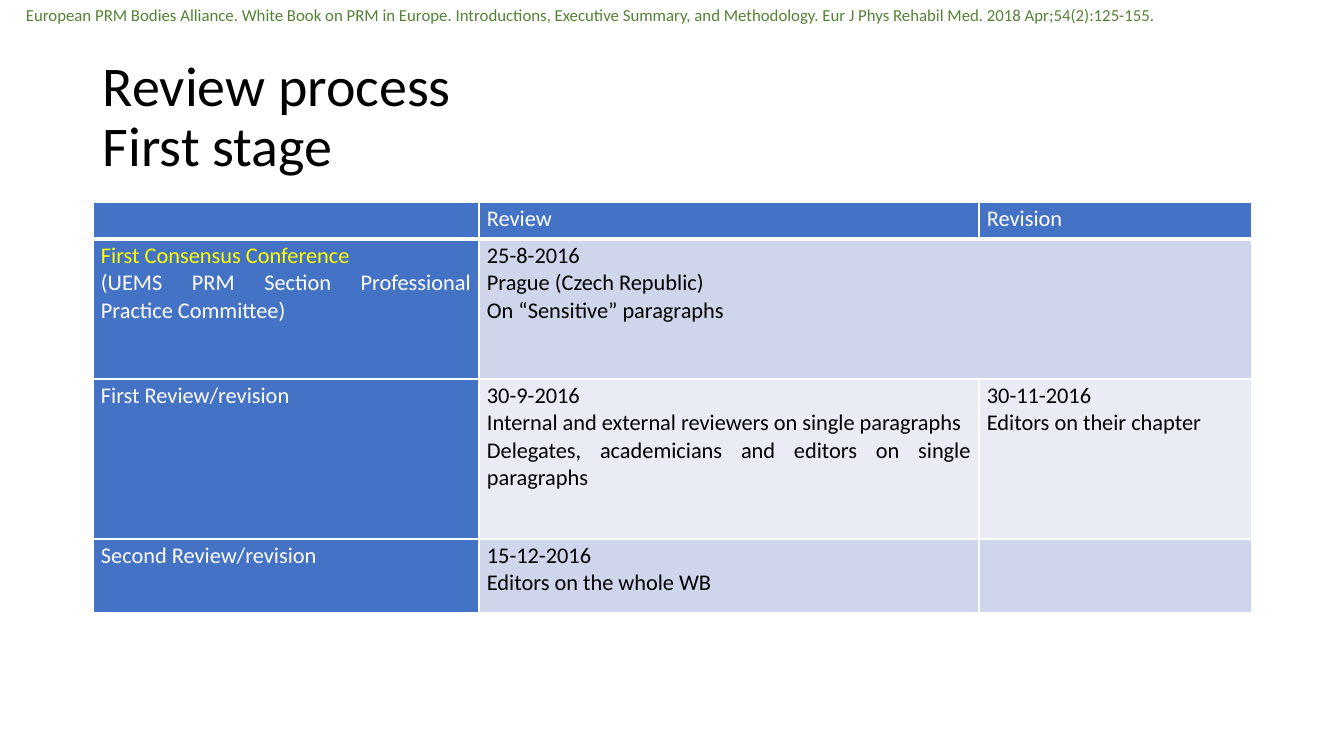
"""Build the slide on the first stage of the review process."""
import lxml.etree
import pptx
import pptx.dml.color
import pptx.enum.text
import pptx.oxml.ns
import pptx.util

EMU_PER_PX = 914400 / 100.8
FONT = "Calibri"
WHITE, BLACK, YELLOW, GREEN = "FFFFFF", "000000", "FFFF00", "548235"
HEADER_FILL = "4472C4"
BAND_FILLS = ["E9EBF5", "CFD5EA"]
COLUMN_WIDTHS = [386, 500, 273]
ROW_HEIGHTS = [37, 140, 160, 74]
CITATION = (
    "European PRM Bodies Alliance. White Book on PRM in Europe. Introductions, "
    "Executive Summary, and Methodology. Eur J Phys Rehabil Med. 2018 Apr;54(2):125-155."
)
REVIEW_ROWS = [
    ["", "Review", "Revision"],
    [
        "First Consensus Conference\n(UEMS PRM Section Professional Practice Committee)",
        "25-8-2016\nPrague (Czech Republic)\nOn “Sensitive” paragraphs",
        "",
    ],
    [
        "First Review/revision",
        "30-9-2016\nInternal and external reviewers on single paragraphs\n"
        "Delegates, academicians and editors on single paragraphs",
        "30-11-2016\nEditors on their chapter",
    ],
    ["Second Review/revision", "15-12-2016\nEditors on the whole WB", ""],
]


def px(length):
    return pptx.util.Emu(round(length * EMU_PER_PX))


def color(value):
    return pptx.dml.color.RGBColor.from_string(value)


def style_font(font, size, value):
    font.name = FONT
    font.size = pptx.util.Pt(size)
    font.color.rgb = color(value)


def add_text(slide, box, text, size, value, anchor, line_spacing):
    shape = slide.shapes.add_textbox(*map(px, box))
    text_frame = shape.text_frame
    text_frame.word_wrap = True
    text_frame.vertical_anchor = anchor
    text_frame.text = text
    paragraph = text_frame.paragraphs[0]
    paragraph.line_spacing = line_spacing
    for run in paragraph.runs:
        style_font(run.font, size, value)


def add_borders(cell, bottom_width):
    properties = cell._tc.get_or_add_tcPr()
    for side, width in zip("LRTB", [1, 1, 1, bottom_width]):
        line = lxml.etree.SubElement(
            properties, pptx.oxml.ns.qn(f"a:ln{side}"), w=str(pptx.util.Pt(width))
        )
        fill = lxml.etree.SubElement(line, pptx.oxml.ns.qn("a:solidFill"))
        lxml.etree.SubElement(fill, pptx.oxml.ns.qn("a:srgbClr"), val=WHITE)


def fill_cell(cell, text, row, column):
    is_header = row == 0 or column == 0
    add_borders(cell, 3 if row == 0 else 1)
    cell.fill.solid()
    cell.fill.fore_color.rgb = color(HEADER_FILL if is_header else BAND_FILLS[row % 2])
    cell.margin_left = cell.margin_right = px(8)
    cell.margin_top = cell.margin_bottom = px(3)
    cell.text_frame.text = text
    for paragraph in cell.text_frame.paragraphs:
        paragraph.alignment = pptx.enum.text.PP_ALIGN.JUSTIFY
        for run in paragraph.runs:
            style_font(run.font, 16, WHITE if is_header else BLACK)


def add_review_table(slide, left, top):
    frame = slide.shapes.add_table(
        len(ROW_HEIGHTS), len(COLUMN_WIDTHS),
        px(left), px(top), px(sum(COLUMN_WIDTHS)), px(sum(ROW_HEIGHTS)),
    )
    table = frame.table
    table.horz_banding = False
    for column, width in zip(table.columns, COLUMN_WIDTHS):
        column.width = px(width)
    for row, height in zip(table.rows, ROW_HEIGHTS):
        row.height = px(height)
    for row, texts in enumerate(REVIEW_ROWS):
        for column, text in enumerate(texts):
            fill_cell(table.cell(row, column), text, row, column)
    table.cell(1, 1).merge(table.cell(1, 2))
    conference = table.cell(1, 0).text_frame.paragraphs[0]
    conference.runs[0].font.color.rgb = color(YELLOW)


def main():
    presentation = pptx.Presentation()
    presentation.slide_width = px(1344)
    presentation.slide_height = px(756)
    slide = presentation.slides.add_slide(presentation.slide_layouts[6])
    anchors = pptx.enum.text.MSO_ANCHOR
    add_text(slide, (16, 0, 1328, 30), CITATION, 12, GREEN, anchors.TOP, 1.0)
    add_text(slide, (93, 51, 1159, 135), "Review process\vFirst stage", 40, BLACK,
             anchors.MIDDLE, 0.9)
    add_review_table(slide, 93, 202)
    presentation.save("out.pptx")


if __name__ == "__main__":
    main()
